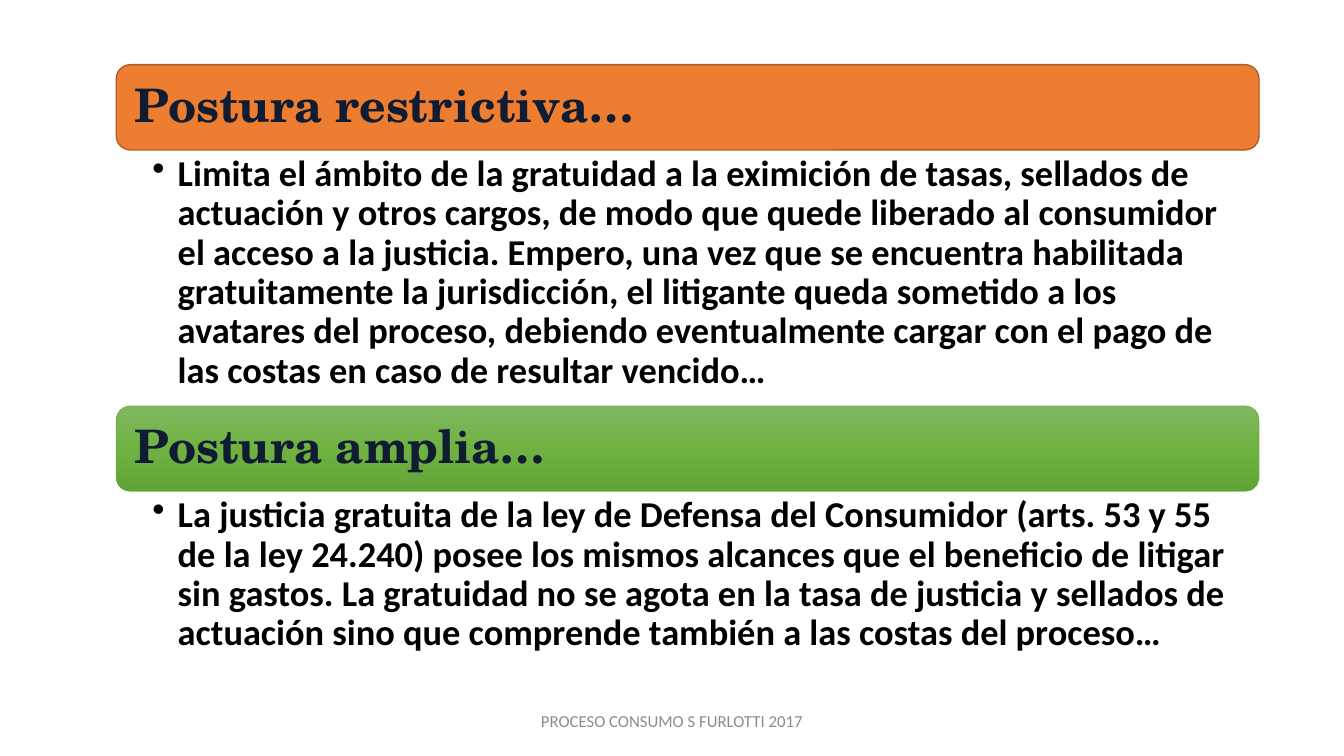
from copy import deepcopy
from dataclasses import dataclass

from lxml import etree
from pptx import Presentation
from pptx.dml.color import RGBColor
from pptx.enum import shapes, text
from pptx.oxml.ns import qn
from pptx.util import Cm, Pt


@dataclass(frozen=True)
class Theme:
    heading_font: str = "TeX Gyre Schola"
    body_font: str = "Calibri"
    heading_size: float = 33
    body_size: float = 26
    footer_size: float = 12
    heading_color: str = "101C32"
    body_color: str = "000000"
    footer_color: str = "8C8C8C"
    orange: tuple = ("ED7D31",)
    orange_edge: str = "AF5C24"
    green: tuple = ("81B861", "6FB242", "62A336")
    green_edge: str = "70AD47"


class SlideBuilder:
    def __init__(self, page, theme):
        self.page = page
        self.theme = theme

    def add_words(self, box, words, font, size, color, bold=False,
                  margins=(0.25, 0.13, 0.25, 0.13)):
        """Put one paragraph in the box; margins are left, top, right, bottom in cm."""
        frame = box.text_frame
        frame.word_wrap = True
        frame.auto_size = text.MSO_AUTO_SIZE.NONE
        (frame.margin_left, frame.margin_top,
         frame.margin_right, frame.margin_bottom) = map(Cm, margins)
        para = frame.paragraphs[0]
        span = para.add_run()
        span.text = words
        span.font.name = font
        span.font.size = Pt(size)
        span.font.bold = bold
        span.font.color.rgb = RGBColor.from_string(color)
        return para

    def paint(self, shape, colors):
        """Fill with one colour, or with a top-down gradient of several."""
        if len(colors) == 1:
            shape.fill.solid()
            shape.fill.fore_color.rgb = RGBColor.from_string(colors[0])
            return
        shape.fill.gradient()
        shape.fill.gradient_angle = 270
        stop_list = shape.element.spPr.find(qn("a:gradFill")).find(qn("a:gsLst"))
        while len(stop_list) < len(colors):
            stop_list.append(deepcopy(stop_list[0]))
        for index, (stop, color) in enumerate(zip(shape.fill.gradient_stops, colors)):
            stop.position = index / (len(colors) - 1)
            stop.color.rgb = RGBColor.from_string(color)

    def banner(self, left, top, width, height, words, colors, edge, edge_width):
        shape = self.page.shapes.add_shape(
            shapes.MSO_SHAPE.ROUNDED_RECTANGLE, Cm(left), Cm(top), Cm(width), Cm(height))
        shape.shadow.inherit = False
        self.paint(shape, colors)
        shape.line.color.rgb = RGBColor.from_string(edge)
        shape.line.width = Pt(edge_width)
        shape.text_frame.vertical_anchor = text.MSO_ANCHOR.MIDDLE
        para = self.add_words(shape, words, self.theme.heading_font, self.theme.heading_size,
                              self.theme.heading_color, True, (0.36,) * 4)
        para.alignment = text.PP_ALIGN.LEFT
        para.line_spacing = 0.9

    def bullet(self, left, top, width, height, words):
        box = self.page.shapes.add_textbox(Cm(left), Cm(top), Cm(width), Cm(height))
        para = self.add_words(box, words, self.theme.body_font, self.theme.body_size,
                              self.theme.body_color, True, (0.91, 0.13, 0.66, 0.13))
        para.level = 1
        para.line_spacing = 0.9
        properties = para._p.get_or_add_pPr()
        properties.set("marL", str(Cm(0.64)))
        properties.set("indent", str(-Cm(0.64)))
        etree.SubElement(properties, qn("a:buChar")).set("char", "•")

    def footer(self, left, top, width, height, words):
        box = self.page.shapes.add_textbox(Cm(left), Cm(top), Cm(width), Cm(height))
        box.text_frame.vertical_anchor = text.MSO_ANCHOR.MIDDLE
        para = self.add_words(box, words, self.theme.body_font, self.theme.footer_size,
                              self.theme.footer_color)
        para.alignment = text.PP_ALIGN.CENTER


def main():
    theme = Theme()
    deck = Presentation()
    deck.slide_width, deck.slide_height = Cm(33.87), Cm(19.05)
    blank_layout = deck.slide_layouts[6]
    builder = SlideBuilder(deck.slides.add_slide(blank_layout), theme)

    positions = [
        ("Postura restrictiva…", theme.orange, theme.orange_edge, 1, 6.45,
         "Limita el ámbito de la gratuidad a la eximición de tasas, sellados de actuación "
         "y otros cargos, de modo que quede liberado al consumidor el acceso a la justicia. "
         "Empero, una vez que se encuentra habilitada gratuitamente la jurisdicción, el "
         "litigante queda sometido a los avatares del proceso, debiendo eventualmente "
         "cargar con el pago de las costas en caso de resultar vencido…"),
        ("Postura amplia…", theme.green, theme.green_edge, 0.5, 4.27,
         "La justicia gratuita de la ley de Defensa del Consumidor (arts. 53 y 55 de la ley "
         "24.240) posee los mismos alcances que el beneficio de litigar sin gastos. La "
         "gratuidad no se agota en la tasa de justicia y sellados de actuación sino que "
         "comprende también a las costas del proceso…"),
    ]
    left, top, width, banner_height = 2.93, 1.63, 28.8, 2.15
    for heading, colors, edge, edge_width, body_height, body in positions:
        builder.banner(left, top, width, banner_height, heading, colors, edge, edge_width)
        top += banner_height
        builder.bullet(left, top, width, body_height, body)
        top += body_height

    builder.footer(11.22, 17.66, 11.43, 1.01, "PROCESO CONSUMO S FURLOTTI 2017")
    deck.save("out.pptx")


if __name__ == "__main__":
    main()
